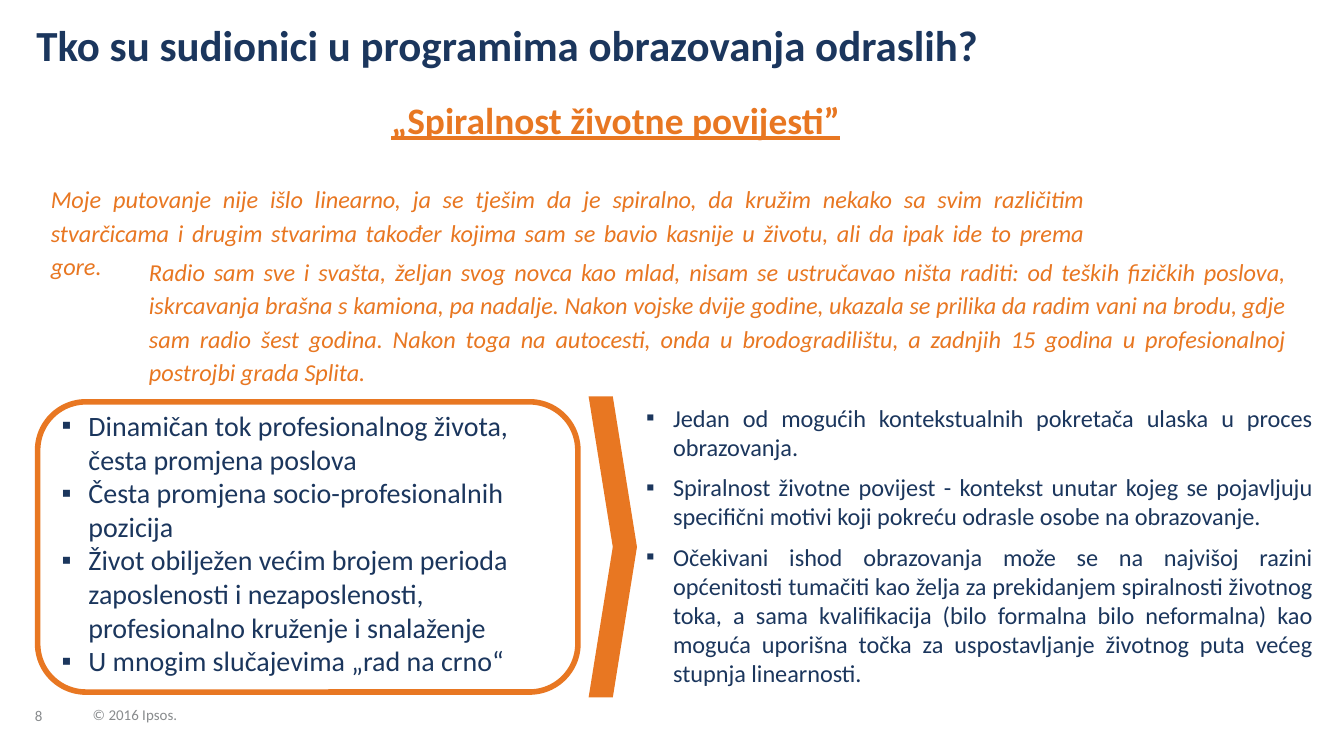
from lxml import etree
from pptx import Presentation
from pptx.dml.color import RGBColor
from pptx.enum.shapes import MSO_SHAPE
from pptx.enum.text import MSO_ANCHOR, MSO_AUTO_SIZE, PP_ALIGN
from pptx.oxml.ns import qn
from pptx.util import Inches, Pt

ROUND, CHEVRON = MSO_SHAPE.ROUNDED_RECTANGLE, MSO_SHAPE.CHEVRON
TOP, BOTTOM = MSO_ANCHOR.TOP, MSO_ANCHOR.BOTTOM
LEFT, JUSTIFY = PP_ALIGN.LEFT, PP_ALIGN.JUSTIFY
FIXED = MSO_AUTO_SIZE.NONE

NAVY, ORANGE, GREY = "1B365D", "E87722", "888B8D"
FONT = "Calibri"

HEAD = "Tko su sudionici u programima obrazovanja odraslih?"
THEME = "„Spiralnost životne povijesti”"
QUOTES = [
    ((0.28, 1.29, 7.88, 0.86),
     "Moje putovanje nije išlo linearno, ja se tješim da je spiralno, da kružim "
     "nekako sa svim različitim stvarčicama i drugim stvarima također kojima sam "
     "se bavio kasnije u životu, ali da ipak ide to prema gore."),
    ((1.01, 1.83, 8.65, 1.36),
     "Radio sam sve i svašta, željan svog novca kao mlad, nisam se ustručavao "
     "ništa raditi: od teških fizičkih poslova, iskrcavanja brašna s kamiona, pa "
     "nadalje. Nakon vojske dvije godine, ukazala se prilika da radim vani na "
     "brodu, gdje sam radio šest godina. Nakon toga na autocesti, onda u "
     "brodogradilištu, a zadnjih 15 godina u profesionalnoj postrojbi grada Splita."),
]
TRAITS = [
    "Dinamičan tok profesionalnog života, česta promjena poslova",
    "Česta promjena socio-profesionalnih pozicija",
    "Život obilježen većim brojem perioda zaposlenosti i nezaposlenosti, "
    "profesionalno kruženje i snalaženje",
    "U mnogim slučajevima „rad na crno“",
]
CLAIMS = [
    "Jedan od mogućih kontekstualnih pokretača ulaska u proces obrazovanja.",
    "Spiralnost životne povijest - kontekst unutar kojeg se pojavljuju "
    "specifični motivi koji pokreću odrasle osobe na obrazovanje.",
    "Očekivani ishod obrazovanja može se na najvišoj razini općenitosti tumačiti "
    "kao želja za prekidanjem spiralnosti životnog toka, a sama kvalifikacija "
    "(bilo formalna bilo neformalna) kao moguća uporišna točka za uspostavljanje "
    "životnog puta većeg stupnja linearnosti.",
]


def color(code):
    return RGBColor.from_string(code)


def bullet(para):
    """Give a paragraph a square bullet with a hanging indent."""
    props = para._p.get_or_add_pPr()
    props.set("marL", str(Inches(0.2)))
    props.set("indent", str(-Inches(0.2)))
    etree.SubElement(props, qn("a:buFont")).set("typeface", "Arial")
    etree.SubElement(props, qn("a:buChar")).set("char", "▪")


def write(frame, lines, size=13, ink=NAVY, bold=False, italic=False, under=False,
          align=LEFT, lead=1.0, gap=0, dots=False, anchor=TOP, inset=True):
    frame.auto_size = FIXED
    frame.word_wrap = True
    frame.vertical_anchor = anchor
    frame.margin_left = frame.margin_right = Inches(0.1 if inset else 0)
    frame.margin_top = frame.margin_bottom = Inches(0.05 if inset else 0)
    for i, line in enumerate(lines):
        para = frame.add_paragraph() if i else frame.paragraphs[0]
        para.alignment = align
        para.line_spacing = lead
        para.space_before = Pt(gap if i else 0)
        if dots:
            bullet(para)
        run = para.add_run()
        run.text = line
        font = run.font
        font.name, font.size = FONT, Pt(size)
        font.bold, font.italic, font.underline = bold, italic, under
        font.color.rgb = color(ink)


class Page:
    def __init__(self, slide):
        self.slide = slide

    def title(self, text, box, **style):
        shape = self.slide.shapes.title
        shape.left, shape.top, shape.width, shape.height = map(Inches, box)
        write(shape.text_frame, [text], **style)

    def text(self, lines, box, **style):
        shape = self.slide.shapes.add_textbox(*map(Inches, box))
        write(shape.text_frame, lines, **style)

    def shape(self, kind, box, fill=None, line=None, width=3):
        shape = self.slide.shapes.add_shape(kind, *map(Inches, box))
        shape.shadow.inherit = False
        if fill:
            shape.fill.solid()
            shape.fill.fore_color.rgb = color(fill)
        else:
            shape.fill.background()
        if line:
            shape.line.color.rgb = color(line)
            shape.line.width = Pt(width)
        else:
            shape.line.fill.background()


def main():
    deck = Presentation()
    deck.slide_width = Inches(10)
    deck.slide_height = deck.slide_width * 9 // 16
    page = Page(deck.slides.add_slide(deck.slide_layouts[5]))

    page.title(HEAD, (0.27, 0.18, 7.31, 0.35), size=23, bold=True,
               lead=0.9, inset=False)
    page.text([THEME], (2.91, 0.76, 3.59, 0.3), size=20, ink=ORANGE, bold=True,
              under=True, lead=0.9, inset=False)
    for box, quote in QUOTES:
        page.text([quote], box, ink=ORANGE, italic=True, align=JUSTIFY, lead=1.15)

    page.text(TRAITS, (0.36, 2.99, 3.82, 2.12), size=15, dots=True)
    page.shape(ROUND, (0.28, 2.99, 4.02, 2.16), line=ORANGE)
    page.shape(CHEVRON, (4.38, 2.95, 0.36, 2.24), fill=ORANGE)
    page.text(CLAIMS, (4.71, 2.95, 5.15, 2.24), align=JUSTIFY, gap=6, dots=True)

    foot = dict(size=8, ink=GREY, lead=0.85, anchor=BOTTOM, inset=False)
    page.text(["8"], (0.26, 5.13, 0.34, 0.26), **foot)
    page.text(["© 2016 Ipsos."], (0.69, 5.2, 0.76, 0.18), **foot)
    deck.save("out.pptx")


if __name__ == "__main__":
    main()
